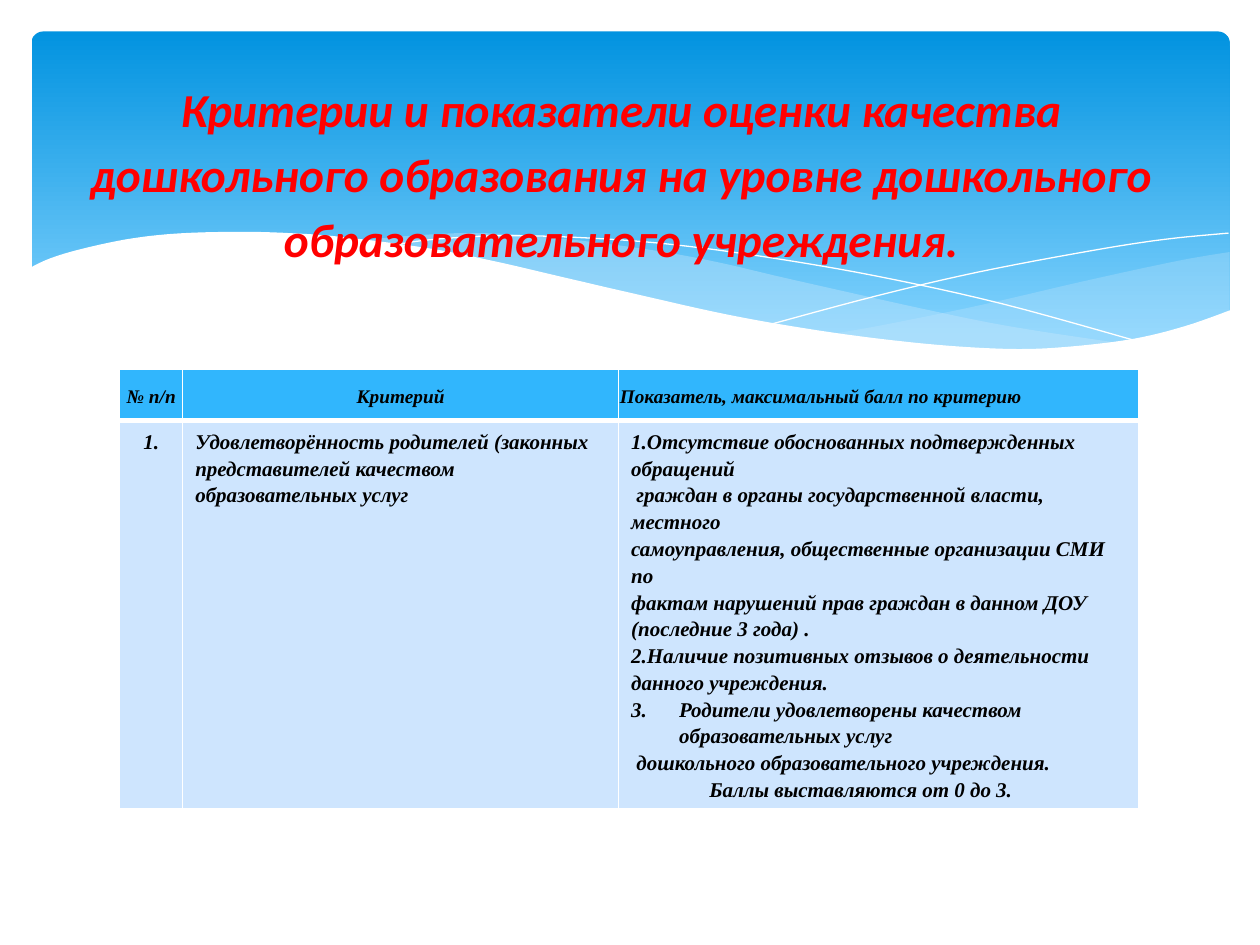
"""Build a slide with a wave banner, a title and a table of quality criteria."""
import dataclasses

import lxml.etree
import pptx
import pptx.dml.color
import pptx.enum.shapes
import pptx.enum.text
import pptx.oxml
import pptx.oxml.ns
import pptx.util

Inches = pptx.util.Inches
Align = pptx.enum.text.PP_ALIGN
Anchor = pptx.enum.text.MSO_ANCHOR


@dataclasses.dataclass(frozen=True)
class Theme:
    white: str = "FFFFFF"
    black: str = "000000"
    title_color: str = "FF0000"
    banner_top: str = "0293E0"
    banner_bottom: str = "83D3FE"
    ribbon: str = "C6E7FC"
    header_fill: str = "31B6FD"
    body_fill: str = "CEE5FE"
    title_font: str = "Calibri"
    table_font: str = "Times New Roman"
    title_size: int = 27
    header_size: int = 11
    body_size: int = 12
    line_spacing: float = 1.15


def rgb(color):
    return pptx.dml.color.RGBColor.from_string(color)


def smooth(points, steps=6):
    padded = [points[0], *points, points[-1]]
    curve = [points[0]]
    for a, b, c, d in zip(padded, padded[1:], padded[2:], padded[3:]):
        for step in range(1, steps + 1):
            t = step / steps
            curve.append(tuple(
                0.5 * (2 * q + (r - p) * t + (2 * p - 5 * q + 4 * r - s) * t ** 2
                       + (3 * q - p - 3 * r + s) * t ** 3)
                for p, q, r, s in zip(a, b, c, d)))
    return curve


class SlideBuilder:
    def __init__(self, page, theme):
        self.page = page
        self.theme = theme

    def banner(self, left, top, width, height, radius):
        shape = self.page.shapes.add_shape(
            pptx.enum.shapes.MSO_SHAPE.ROUNDED_RECTANGLE,
            Inches(left), Inches(top), Inches(width), Inches(height))
        shape.adjustments[0] = radius
        shape.shadow.inherit = False
        shape.line.fill.background()
        shape.fill.gradient()
        shape.fill.gradient_angle = 270
        colors = (self.theme.banner_top, self.theme.banner_bottom)
        for stop, color, position in zip(shape.fill.gradient_stops, colors, (0, 0.9)):
            stop.color.rgb = rgb(color)
            stop.position = position

    def outline(self, points, closed):
        start, *rest = [(Inches(x), Inches(y)) for x, y in points]
        builder = self.page.shapes.build_freeform(*start)
        builder.add_line_segments(rest, close=closed)
        shape = builder.convert_to_shape()
        shape.shadow.inherit = False
        return shape

    def area(self, points, color, opacity=100):
        shape = self.outline(points, True)
        shape.line.fill.background()
        shape.fill.solid()
        shape.fill.fore_color.rgb = rgb(color)
        if opacity < 100:
            tint = shape.element.spPr.find(".//" + pptx.oxml.ns.qn("a:srgbClr"))
            lxml.etree.SubElement(
                tint, pptx.oxml.ns.qn("a:alpha"), val=str(opacity * 1000))

    def hairline(self, points):
        shape = self.outline(smooth(points), False)
        shape.fill.background()
        shape.line.color.rgb = rgb(self.theme.white)
        shape.line.width = pptx.util.Pt(0)

    def add_text(self, para, text, font, size, color, align):
        para.alignment = align
        para.line_spacing = self.theme.line_spacing
        span = para.add_run()
        span.text = text
        span.font.name = font
        span.font.size = pptx.util.Pt(size)
        span.font.color.rgb = rgb(color)
        span.font.bold = span.font.italic = True

    def title(self, text, left, top, width, height):
        box = self.page.shapes.add_textbox(
            Inches(left), Inches(top), Inches(width), Inches(height))
        frame = box.text_frame
        frame.word_wrap = True
        frame.vertical_anchor = Anchor.MIDDLE
        para = frame.paragraphs[0]
        para.space_before = pptx.util.Pt(5)
        para.space_after = pptx.util.Pt(10)
        self.add_text(para, text, self.theme.title_font, self.theme.title_size,
                      self.theme.title_color, Align.CENTER)

    def borders(self, cell, widths):
        properties = cell._tc.get_or_add_tcPr()
        for index, (side, width) in enumerate(zip("LRTB", widths)):
            properties.insert(index, pptx.oxml.parse_xml(
                f'<a:ln{side} {pptx.oxml.ns.nsdecls("a")} w="{pptx.util.Pt(width)}">'
                f'<a:solidFill><a:srgbClr val="{self.theme.white}"/></a:solidFill>'
                f'</a:ln{side}>'))

    def cell(self, cell, lines, align, header):
        theme = self.theme
        cell.fill.solid()
        cell.fill.fore_color.rgb = rgb(theme.header_fill if header else theme.body_fill)
        self.borders(cell, (1, 1, 1, 3) if header else (1, 1, 3, 1))
        if header:
            cell.vertical_anchor = Anchor.MIDDLE
            cell.margin_left = cell.margin_right = cell.margin_top = Inches(0.01)
            cell.margin_bottom = 0
        frame = cell.text_frame
        for index, (text, margin, indent) in enumerate(lines):
            para = frame.add_paragraph() if index else frame.paragraphs[0]
            if margin:
                properties = para._p.get_or_add_pPr()
                properties.set("marL", str(Inches(margin)))
                properties.set("indent", str(Inches(indent)))
            self.add_text(para, text, theme.table_font,
                          theme.header_size if header else theme.body_size,
                          theme.black, align)

    def table(self, left, top, widths, heights, rows, alignments):
        table = self.page.shapes.add_table(
            len(rows), len(widths), Inches(left), Inches(top),
            Inches(sum(widths)), Inches(sum(heights))).table
        for column, width in zip(table.columns, widths):
            column.width = Inches(width)
        for index, (height, row, aligns) in enumerate(zip(heights, rows, alignments)):
            table.rows[index].height = Inches(height)
            for column, (lines, align) in enumerate(zip(row, aligns)):
                self.cell(table.cell(index, column), lines, align, index == 0)


RIGHT_RIBBON = (
    [(9.76, 2), (9.35, 2.07), (8.61, 2.23), (7.79, 2.42), (7.06, 2.57), (6.61, 2.65)],
    [(6.61, 2.65), (7.05, 2.71), (7.57, 2.76), (8.14, 2.78), (8.63, 2.75),
     (9.13, 2.67), (9.49, 2.57), (9.76, 2.47)])
MIDDLE_RIBBON = (
    [(8.93, 2.73), (8.07, 2.6), (7.41, 2.47), (6.29, 2.22), (5.69, 2.08),
     (5.14, 1.98), (4.42, 1.89), (3.8, 1.85), (3.28, 1.87), (2.86, 1.91)],
    [(2.86, 1.91), (3.42, 1.99), (4.04, 2.11), (4.91, 2.32), (5.66, 2.48),
     (6.34, 2.61), (6.95, 2.7), (7.48, 2.76), (8.07, 2.78), (8.57, 2.77), (8.93, 2.73)])
FALLING_LINE = [
    (3.09, 1.95), (3.44, 1.9), (4.01, 1.87), (4.69, 1.89), (5.33, 1.94),
    (6.08, 2.04), (6.95, 2.19), (7.95, 2.41), (9.07, 2.72)]
RISING_LINE = [
    (6.13, 2.57), (6.95, 2.35), (7.76, 2.16), (8.66, 1.99), (9.24, 1.9), (9.75, 1.85)]
WAVE_EDGE = [
    (9.77, 2.46), (9.4, 2.59), (8.99, 2.69), (8.5, 2.75), (8.09, 2.77), (7.61, 2.75),
    (7.08, 2.7), (6.48, 2.62), (5.79, 2.5), (5.03, 2.33), (4.47, 2.2), (3.91, 2.07),
    (3.4, 1.97), (2.71, 1.88), (2.3, 1.85), (1.93, 1.84), (1.46, 1.85), (1.06, 1.89),
    (0.67, 1.97), (0.4, 2.05), (0.23, 2.13)]

TITLE = ("Критерии и показатели оценки качества дошкольного образования "
         "на уровне дошкольного образовательного учреждения.")
HEADER = [[(text, 0, 0)] for text in (
    "№ п/п", "Критерий", "Показатель, максимальный балл по критерию")]
CRITERION = [
    [("1.", 0, 0)],
    [("Удовлетворённость родителей (законных представителей качеством "
      "образовательных услуг", 0, 0)],
    [("1.Отсутствие обоснованных подтвержденных обращений", 0, 0),
     (" граждан в органы государственной власти, местного", 0, 0),
     ("самоуправления, общественные организации СМИ по", 0, 0),
     ("фактам нарушений прав граждан в данном ДОУ (последние 3 года) .", 0, 0),
     ("2.Наличие позитивных отзывов о деятельности данного учреждения.", 0, 0),
     ("3.\tРодители удовлетворены качеством образовательных услуг", 0.38, -0.38),
     (" дошкольного образовательного учреждения.", 0.38, -0.38),
     ("Баллы выставляются от 0 до 3.", 0.62, 0)]]


def main():
    deck = pptx.Presentation()
    deck.slide_width, deck.slide_height = Inches(10), Inches(7.5)
    theme = Theme()
    builder = SlideBuilder(deck.slides.add_slide(deck.slide_layouts[6]), theme)
    builder.banner(0.25, 0.25, 9.51, 2.7, 0.034)
    for (upper, lower), opacity in ((RIGHT_RIBBON, 29), (MIDDLE_RIBBON, 40)):
        builder.area(smooth(upper) + smooth(lower), theme.ribbon, opacity)
    for line in (FALLING_LINE, RISING_LINE):
        builder.hairline(line)
    builder.area(smooth(WAVE_EDGE) + [(0.23, 3.29), (9.77, 3.29)], theme.white)
    builder.table(
        0.95, 2.93, (0.5, 3.46, 4.13), (0.41, 3.08), (HEADER, CRITERION),
        ((Align.CENTER, Align.CENTER, Align.LEFT), (Align.CENTER, Align.LEFT, Align.LEFT)))
    builder.title(TITLE, 0.43, 0.36, 9, 1.97)
    deck.save("out.pptx")


if __name__ == "__main__":
    main()
